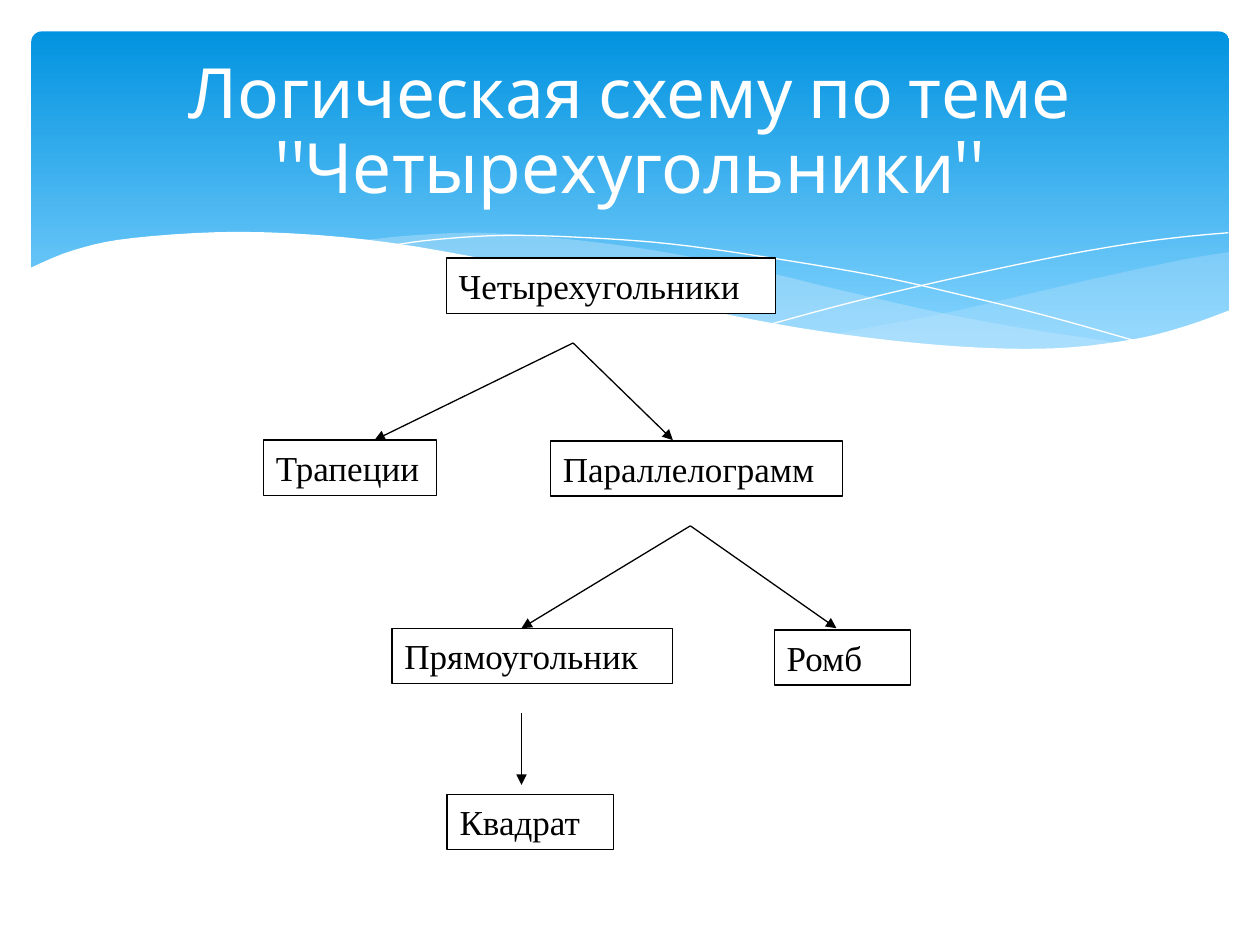
from lxml.etree import SubElement
from pptx import Presentation
from pptx.dml.color import RGBColor
from pptx.enum.shapes import MSO_CONNECTOR, MSO_SHAPE
from pptx.enum.text import MSO_ANCHOR, MSO_AUTO_SIZE, PP_ALIGN
from pptx.oxml.ns import qn
from pptx.util import Pt


def color(code):
    return RGBColor.from_string(code)


def write(frame, text, size=20, font="Times New Roman", ink="000000",
          align=PP_ALIGN.LEFT, anchor=MSO_ANCHOR.TOP, after=0, space=1.0):
    frame.word_wrap = True
    frame.auto_size = MSO_AUTO_SIZE.NONE
    frame.vertical_anchor = anchor
    para = frame.paragraphs[0]
    para.alignment = align
    para.space_after = Pt(after)
    para.line_spacing = space
    run = para.add_run()
    run.text = text
    run.font.size = Pt(size)
    run.font.name = font
    run.font.color.rgb = color(ink)


def smooth(knots, steps=5):
    ends = [knots[0], *knots, knots[-1]]
    curve = [knots[0]]
    for a, b, c, d in zip(ends, ends[1:], ends[2:], ends[3:]):
        for step in range(1, steps + 1):
            t = step / steps
            curve.append(tuple(
                q + t / 2 * (r - p + t * (2 * p - 5 * q + 4 * r - s
                                          + t * (3 * (q - r) + s - p)))
                for p, q, r, s in zip(a, b, c, d)))
    return curve


class Page:
    white = "FFFFFF"
    black = "000000"
    mist = "C6E7FC"
    stroke = 0.75

    def __init__(self, deck):
        self.slide = deck.slides.add_slide(deck.slide_layouts[5])
        self.shapes = self.slide.shapes

    def panel(self, left, top, width, height):
        shape = self.shapes.add_shape(
            MSO_SHAPE.ROUNDED_RECTANGLE, Pt(left), Pt(top), Pt(width), Pt(height))
        shape.adjustments[0] = 0.03
        shape.shadow.inherit = False
        shape.line.fill.background()
        shape.fill.gradient()
        shape.fill.gradient_angle = 270
        stops = zip(shape.fill.gradient_stops, (0, 0.9), ("0293E0", "83D3FE"))
        for stop, place, code in stops:
            stop.position = place
            stop.color.rgb = color(code)

    def trace(self, points, close):
        first, *rest = [(Pt(x), Pt(y)) for x, y in points]
        pen = self.shapes.build_freeform(*first)
        pen.add_line_segments(rest, close=close)
        shape = pen.convert_to_shape()
        shape.shadow.inherit = False
        return shape

    def wave(self, points, fill, alpha=100):
        shape = self.trace(points, True)
        shape.line.fill.background()
        shape.fill.solid()
        shape.fill.fore_color.rgb = color(fill)
        if alpha < 100:
            tint = shape.fill._xPr.find(qn("a:solidFill"))[0]
            SubElement(tint, qn("a:alpha"), val=str(alpha * 1000))

    def thread(self, points):
        shape = self.trace(points, False)
        shape.fill.background()
        shape.line.color.rgb = color(self.white)
        shape.line.width = Pt(0)

    def title(self, text, left, top, width, height):
        shape = self.shapes.title
        shape.left, shape.top = Pt(left), Pt(top)
        shape.width, shape.height = Pt(width), Pt(height)
        write(shape.text_frame, text, size=39.6, font="Cabin", ink=self.white,
              align=PP_ALIGN.CENTER, anchor=MSO_ANCHOR.MIDDLE, space=0.9)
        self.shapes._spTree.append(shape._element)

    def box(self, text, left, top, width, height=31.5):
        shape = self.shapes.add_shape(
            MSO_SHAPE.RECTANGLE, Pt(left), Pt(top), Pt(width), Pt(height))
        shape.shadow.inherit = False
        shape.fill.solid()
        shape.fill.fore_color.rgb = color(self.white)
        shape.line.color.rgb = color(self.black)
        shape.line.width = Pt(self.stroke)
        write(shape.text_frame, text, after=10)

    def arrow(self, start, end):
        line = self.shapes.add_connector(
            MSO_CONNECTOR.STRAIGHT, *[Pt(n) for n in (*start, *end)])
        line.line.color.rgb = color(self.black)
        line.line.width = Pt(self.stroke)
        SubElement(line.line._get_or_add_ln(), qn("a:tailEnd"), type="triangle")
        SubElement(line._element.spPr, qn("a:effectLst"))


def main():
    deck = Presentation()
    deck.slide_width, deck.slide_height = Pt(720), Pt(540)
    page = Page(deck)

    page.panel(18, 18, 684.5, 194.5)
    page.wave(
        smooth([(702.5, 144), (673, 149), (620, 160.5), (542, 178.5), (476, 191)])
        + smooth([(476, 191), (508, 195), (545, 198.5), (586, 200),
                  (621, 198), (657, 192), (683, 185), (702.5, 178)]),
        page.mist, 29)
    page.wave(
        smooth([(206, 137.5), (236, 134.5), (274, 133), (318, 136), (370, 142.5),
                (431, 154), (481, 166), (534, 178), (581, 187), (643, 196.5)])
        + smooth([(643, 196.5), (617, 199.5), (581, 200), (538.5, 198.5),
                  (490, 193), (433, 183.5), (382, 173), (323, 160),
                  (276, 149), (233, 141), (206, 137.5)]),
        page.mist, 40)
    page.thread(smooth([
        (222.5, 140.5), (248, 137), (289, 134.5), (338, 136), (384, 139.5),
        (438, 147), (500, 157.5), (547, 168), (598, 180.5), (653, 196)]))
    page.thread(smooth([
        (441.5, 185), (484, 173.5), (538.5, 160.5), (602, 147),
        (644.5, 139.5), (675, 135.5), (702, 133)]))
    page.wave(
        smooth([(16.5, 153.5), (42, 143), (76, 136), (139, 132.5), (210, 137),
                (282, 149), (342, 163), (417, 180), (481, 191), (548, 198),
                (603, 199), (647, 194), (677, 186.5), (703.5, 177)])
        + [(703.5, 237), (16.5, 237)],
        page.white)

    page.title('Логическая схему по теме "Четырехугольники"', 36, 27, 648, 98.5)

    for text, left, top, width in (
            ("Четырехугольники", 255, 147.5, 188),
            ("Трапеции", 150.5, 251.5, 99),
            ("Параллелограмм", 314.5, 252, 167),
            ("Прямоугольник", 224, 359, 160.5),
            ("Ромб", 442.5, 360, 78),
            ("Квадрат", 255.5, 454, 95)):
        page.box(text, left, top, width)

    for start, ends in (
            ((327.5, 196), ((214, 251.5), (384.5, 251.5))),
            ((394.5, 300.5), ((298, 359), (478, 359))),
            ((298, 407.5), ((298, 448.5),))):
        for end in ends:
            page.arrow(start, end)

    deck.save("out.pptx")


if __name__ == "__main__":
    main()
